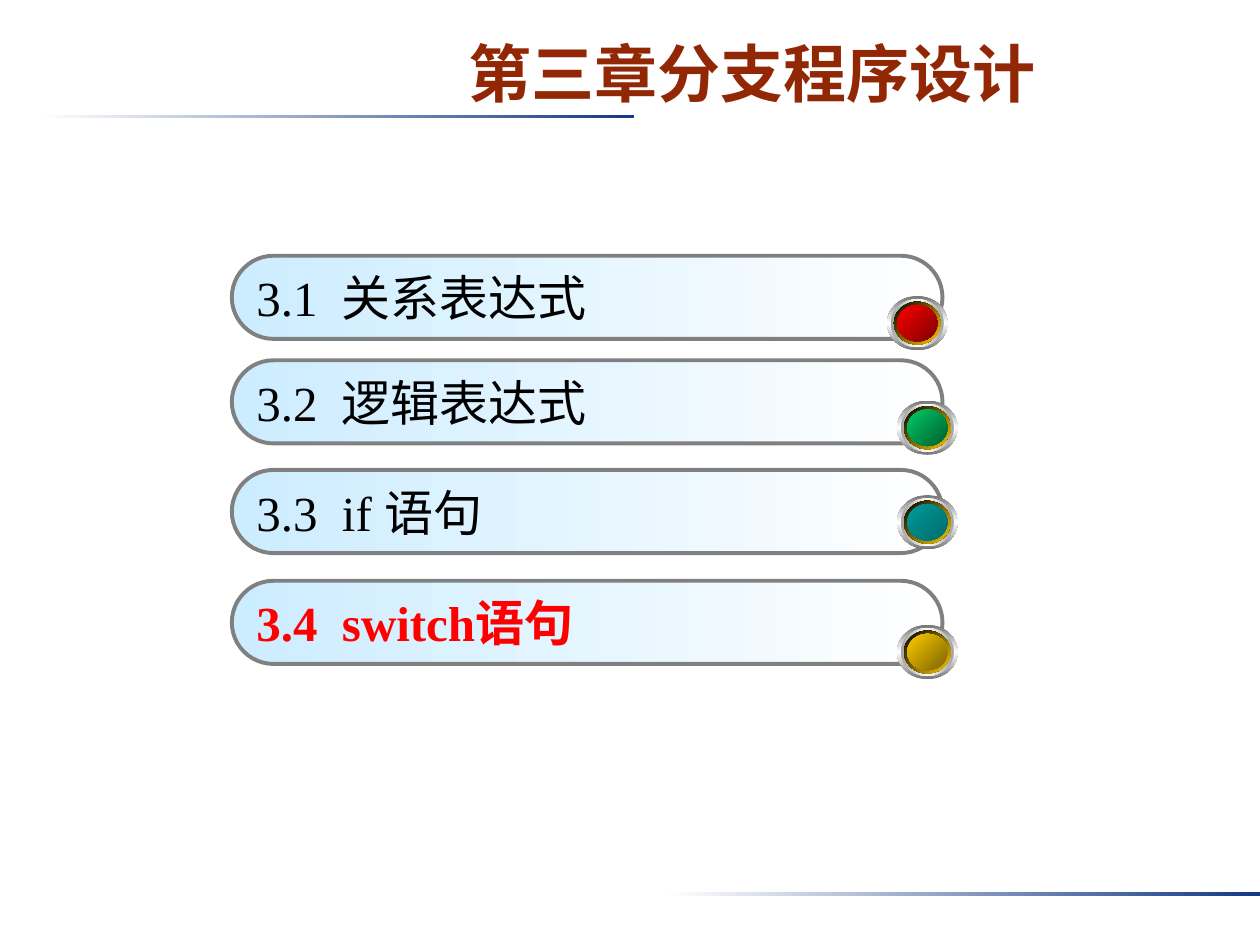
from copy import deepcopy
from dataclasses import dataclass

from pptx import Presentation
from pptx.dml.color import RGBColor
from pptx.enum.shapes import MSO_SHAPE
from pptx.enum.text import MSO_ANCHOR, MSO_AUTO_SIZE, PP_ALIGN
from pptx.oxml.ns import qn
from pptx.util import Inches, Pt

RECT, ROUND, OVAL = MSO_SHAPE.RECTANGLE, MSO_SHAPE.ROUNDED_RECTANGLE, MSO_SHAPE.OVAL
MIDDLE, NO_FIT = MSO_ANCHOR.MIDDLE, MSO_AUTO_SIZE.NONE
LEFT, CENTER = PP_ALIGN.LEFT, PP_ALIGN.CENTER


@dataclass(frozen=True)
class Theme:
    head: str = "922706"
    text: str = "000000"
    hot: str = "FF0000"
    edge: str = "808080"
    rule: tuple = ("FFFFFF", "133984")
    bar: tuple = ("CCECFF", "FFFFFF")
    rim: tuple = ("767676", "FFFFFF", "767676")
    ring: tuple = ("A2A2A2", "FFFFFF", "A2A2A2")
    gold: tuple = ("000000", "FFCC00")
    head_font: str = "Arial"
    font: str = "Times New Roman"
    head_size: int = 36
    size: int = 28
    edge_size: float = 2.25


THEME = Theme()

# text, bar top, light left, light top, light colours, current section
ITEMS = [
    ("3.1  关系表达式", 2.03, 7.04, 2.35, ("FF0000", "7C0000"), False),
    ("3.2  逻辑表达式", 2.86, 7.12, 3.18, ("00CC66", "005E2F"), False),
    ("3.3  if 语句", 3.73, 7.12, 3.93, ("009999", "006D6D"), False),
    ("3.4  switch语句", 4.61, 7.12, 4.96, ("FFCC00", "7C6300"), True),
]


def shade(shape, colors, angle):
    """Fill with evenly spaced colours, the angle being clockwise."""
    fill = shape.fill
    fill.gradient()
    fill.gradient_angle = -angle % 360
    stops = shape.element.spPr.find(qn("a:gradFill")).find(qn("a:gsLst"))
    for _ in colors[2:]:
        stops.append(deepcopy(stops[0]))
    for i, (stop, color) in enumerate(zip(fill.gradient_stops, colors)):
        stop.color.rgb = RGBColor.from_string(color)
        stop.position = i / (len(colors) - 1)


def add_form(shapes, kind, box, colors, angle=0):
    shape = shapes.add_shape(kind, *(Inches(n) for n in box))
    shape.shadow.inherit = False
    shape.line.fill.background()
    shade(shape, colors, angle)
    return shape


def add_run(para, text, font, size, color, bold):
    run = para.add_run()
    run.text = text
    run.font.name = font
    run.font.size = Pt(size)
    run.font.bold = bold
    run.font.color.rgb = RGBColor.from_string(color)


def add_title(slide, box, text):
    title = slide.shapes.title
    title.left, title.top, title.width, title.height = (Inches(n) for n in box)
    frame = title.text_frame
    frame.auto_size = NO_FIT
    frame.vertical_anchor = MIDDLE
    para = frame.paragraphs[0]
    para.alignment = CENTER
    add_run(para, text, THEME.head_font, THEME.head_size, THEME.head, True)


def add_bar(shapes, box, text, hot):
    bar = add_form(shapes, ROUND, box, THEME.bar)
    bar.adjustments[0] = 0.5
    bar.line.color.rgb = RGBColor.from_string(THEME.edge)
    bar.line.width = Pt(THEME.edge_size)
    frame = bar.text_frame
    frame.vertical_anchor = MIDDLE
    para = frame.paragraphs[0]
    para.alignment = LEFT
    color = THEME.hot if hot else THEME.text
    add_run(para, text, THEME.font, THEME.size, color, hot)


def add_light(shapes, box, colors):
    """Stack ovals that share the centre of the box."""
    left, top, width, height = box
    layers = [
        (width, height, THEME.rim, 90),
        (0.42, 0.38, THEME.ring, 0),
        (0.37, 0.34, THEME.gold, 45),
        (0.32, 0.29, colors, 45),
    ]
    for wide, high, tones, angle in layers:
        spot = (left + (width - wide) / 2, top + (height - high) / 2, wide, high)
        add_form(shapes, OVAL, spot, tones, angle)


def add_item(slide, bar, light, text, colors, hot):
    group = slide.shapes.add_group_shape()
    add_bar(group.shapes, bar, text, hot)
    add_light(group.shapes, light, colors)


def main():
    deck = Presentation()
    deck.slide_width, deck.slide_height = Inches(10), Inches(7.5)
    slide = deck.slides.add_slide(deck.slide_layouts[5])
    for left, top in ((0.31, 0.91), (5.28, 7.08)):
        add_form(slide.shapes, RECT, (left, top, 4.72, 0.03), THEME.rule)
    add_title(slide, (1.93, 0.2, 8.07, 0.75), "第三章分支程序设计")
    for text, top, x, y, colors, hot in reversed(ITEMS):
        bar, light = (1.84, top, 5.64, 0.66), (x, y, 0.48, 0.43)
        add_item(slide, bar, light, text, colors, hot)
    deck.save("out.pptx")


if __name__ == "__main__":
    main()
